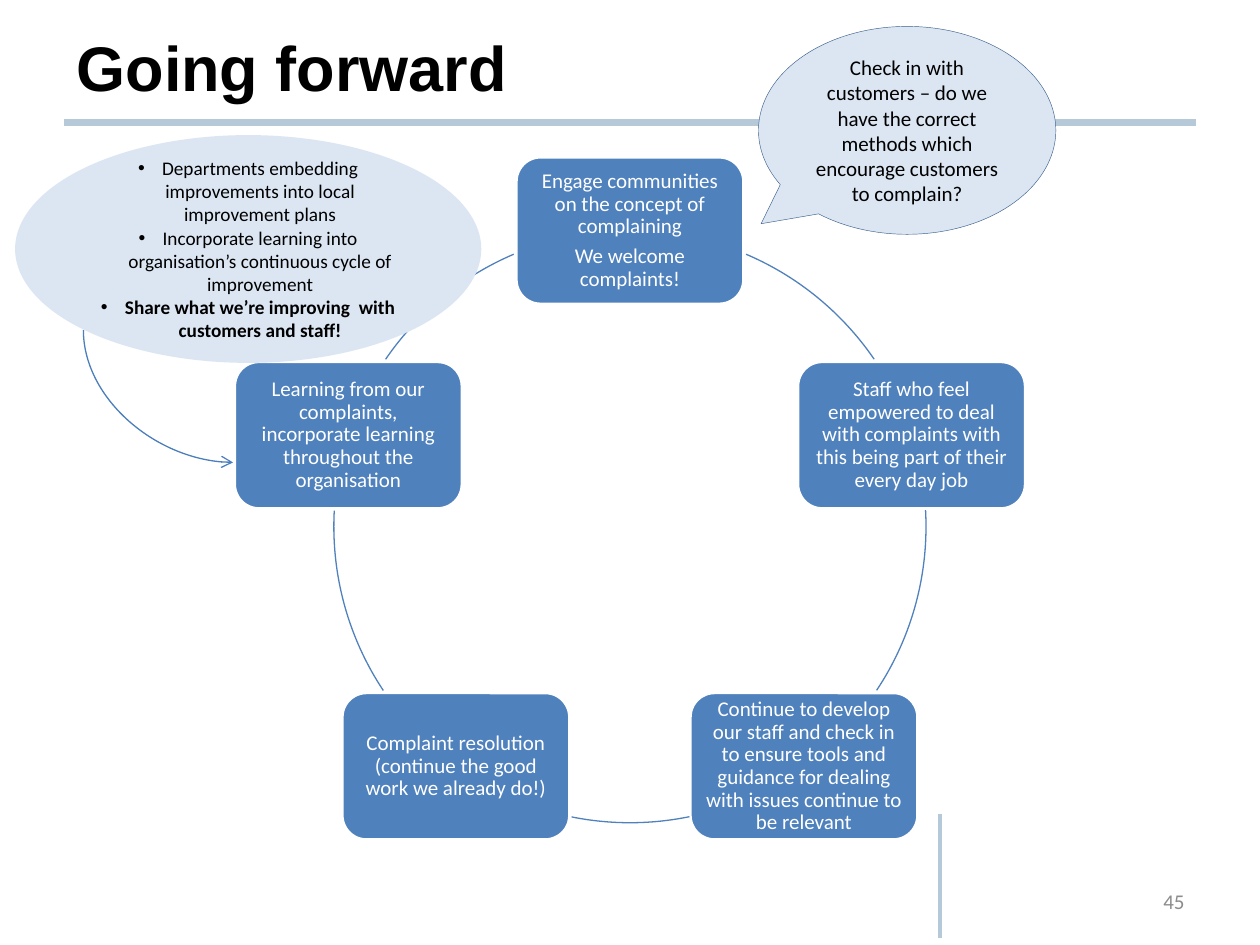
import math

from lxml import etree
from pptx import Presentation
from pptx.dml.color import RGBColor
from pptx.enum.shapes import MSO_CONNECTOR, MSO_SHAPE
from pptx.enum.text import MSO_ANCHOR, PP_ALIGN
from pptx.oxml.ns import qn
from pptx.util import Emu, Inches, Pt

STRAIGHT, CURVE = MSO_CONNECTOR.STRAIGHT, MSO_CONNECTOR.CURVE
ROUNDED, ARC, OVAL = MSO_SHAPE.ROUNDED_RECTANGLE, MSO_SHAPE.ARC, MSO_SHAPE.OVAL
SPEECH = MSO_SHAPE.OVAL_CALLOUT
LEFT, CENTER, RIGHT = PP_ALIGN.LEFT, PP_ALIGN.CENTER, PP_ALIGN.RIGHT
MIDDLE = MSO_ANCHOR.MIDDLE

WIDTH, HEIGHT = 10, 7.5
BLUE, PALE, RULE = "4F81BD", "DCE6F2", "B6C9D8"
WHITE, BLACK, GREY = "FFFFFF", "000000", "8C8C8C"

STEPS = [
    ["Engage communities on the concept of complaining", "We welcome complaints!"],
    ["Staff who feel empowered to deal with complaints with this being part of their every day job"],
    ["Continue to develop our staff and check in to ensure tools and guidance for dealing "
     "with issues continue to be relevant"],
    ["Complaint resolution (continue the good work we already do!)"],
    ["Learning from our complaints, incorporate learning throughout the organisation"],
]
# Degrees clockwise from three o'clock, one arc after each step
ARCS = [(293.1, 325.6), (356.8, 33.6), (78.4, 101.6), (146.4, 183.2), (214.4, 246.9)]
LEARNING = [
    "Departments embedding improvements into local improvement plans",
    "Incorporate learning into organisation’s continuous cycle of improvement",
    "Share what we’re improving  with customers and staff!",
]
QUESTION = ("Check in with customers – do we have the correct methods which "
            "encourage customers to complain?")


def rgb(color):
    return RGBColor.from_string(color)


def within(box, x, y, w, h):
    """Turn shares of a box into a box in inches."""
    left, top, width, height = box
    return left + x * width, top + y * height, w * width, h * height


def write(shape, lines, size, color, align=CENTER, font="Calibri", bold=False):
    frame = shape.text_frame
    frame.word_wrap = True
    frame.vertical_anchor = MIDDLE
    frame.text = "\n".join(lines)
    for paragraph in frame.paragraphs:
        paragraph.alignment = align
        for run in paragraph.runs:
            run.font.size, run.font.name, run.font.bold = Pt(size), font, bold
            run.font.color.rgb = rgb(color)
    return frame


def add_text(slide, box, text, size, color, **style):
    label = slide.shapes.add_textbox(*map(Inches, box))
    write(label, [text], size, color, **style)


def add_shape(slide, kind, box, fill=None, line=None, weight=0.75):
    shape = slide.shapes.add_shape(kind, *map(Inches, box))
    shape.shadow.inherit = False
    if fill:
        shape.fill.solid()
        shape.fill.fore_color.rgb = rgb(fill)
    else:
        shape.fill.background()
    if line:
        shape.line.color.rgb = rgb(line)
        shape.line.width = Pt(weight)
    else:
        shape.line.fill.background()
    return shape


def add_line(slide, kind, start, end, color, weight):
    line = slide.shapes.add_connector(kind, *map(Inches, (*start, *end)))
    line.line.color.rgb = rgb(color)
    line.line.width = Pt(weight)
    etree.SubElement(line._element.spPr, qn("a:effectLst"))
    return line


def add_bullet(paragraph, indent):
    props = paragraph._p.get_or_add_pPr()
    props.set("marL", str(Emu(Inches(indent))))
    props.set("indent", str(-Emu(Inches(indent))))
    etree.SubElement(props, qn("a:buFont"), typeface="Arial")
    etree.SubElement(props, qn("a:buChar"), char="•")


def draw_frame(slide, box):
    """Title, rules and page number."""
    left, top, width, height = box
    rule_y, mark_x = top + 0.13 * height, left + 0.746 * width
    add_line(slide, STRAIGHT, (left + 0.051 * width, rule_y),
             (left + 0.949 * width, rule_y), RULE, 4)
    add_line(slide, STRAIGHT, (mark_x, top + 0.861 * height),
             (mark_x, top + 0.993 * height), RULE, 2)
    add_text(slide, within(box, 0.051, 0.019, 0.899, 0.103), "Going forward",
             36, BLACK, align=LEFT, font="Arial", bold=True)
    add_text(slide, within(box, 0.717, 0.927, 0.233, 0.053), "45", 12, GREY, align=RIGHT)


def draw_cycle(slide, box):
    """Steps evenly spaced round the circle that fills the box, joined by arcs."""
    left, top, size, _ = box
    radius = size / 2
    step_w, step_h = 0.385 * size, 0.249 * size
    for index, (lines, angles) in enumerate(zip(STEPS, ARCS)):
        turn = math.radians(index * 360 / len(STEPS) - 90)
        x = left + radius * (1 + math.cos(turn))
        y = top + radius * (1 + math.sin(turn))
        step = add_shape(slide, ROUNDED, (x - step_w / 2, y - step_h / 2, step_w, step_h),
                         BLUE, WHITE, 2)
        frame = write(step, lines, 12, WHITE)
        frame.margin_left = frame.margin_right = Inches(0.05)
        frame.margin_top = frame.margin_bottom = Inches(0.05)
        for paragraph in frame.paragraphs:
            paragraph.line_spacing = 0.9
            paragraph.space_after = Pt(4.2)

        link = add_shape(slide, ARC, box, line=BLUE)
        for end, angle in enumerate(angles):
            link.adjustments[end] = angle * 0.6  # 60000ths of a degree over 100000


def draw_question(slide, box):
    """Speech bubble pointing at the first step."""
    bubble = add_shape(slide, SPEECH, box, PALE, "3A5F8C", 0.25)
    bubble.adjustments[0], bubble.adjustments[1] = -0.491, 0.449
    write(bubble, [QUESTION], 12, BLACK)


def draw_learning(slide, box):
    """Bulleted oval with a curved arrow to the learning step."""
    oval = add_shape(slide, OVAL, box, PALE)
    frame = write(oval, LEARNING, 11, BLACK)
    for paragraph in frame.paragraphs:
        add_bullet(paragraph, 0.19)
    frame.paragraphs[-1].runs[0].font.bold = True

    # Drawn a quarter turn round, so that it leaves the oval downwards
    x, y, w, h = within(box, 0.165, 0.818, 0.284, 0.657)
    arrow = add_line(slide, CURVE, (x + w, y), (x, y + h), "4B7EBC", 0.75)
    props = arrow._element.spPr
    props.find(qn("a:xfrm")).set("rot", str(270 * 60000))
    props.find(qn("a:prstGeom")).set("prst", "curvedConnector2")
    etree.SubElement(props.find(qn("a:ln")), qn("a:tailEnd"), type="arrow")


def main():
    deck = Presentation()
    deck.slide_width, deck.slide_height = Inches(WIDTH), Inches(HEIGHT)
    slide = deck.slides.add_slide(deck.slide_layouts[6])
    page = (0, 0, WIDTH, HEIGHT)
    draw_frame(slide, page)
    draw_cycle(slide, (2.65, 1.83, 4.7, 4.7))
    draw_question(slide, within(page, 0.602, 0.028, 0.236, 0.22))
    draw_learning(slide, within(page, 0.012, 0.143, 0.37, 0.241))
    deck.save("out.pptx")


if __name__ == "__main__":
    main()
